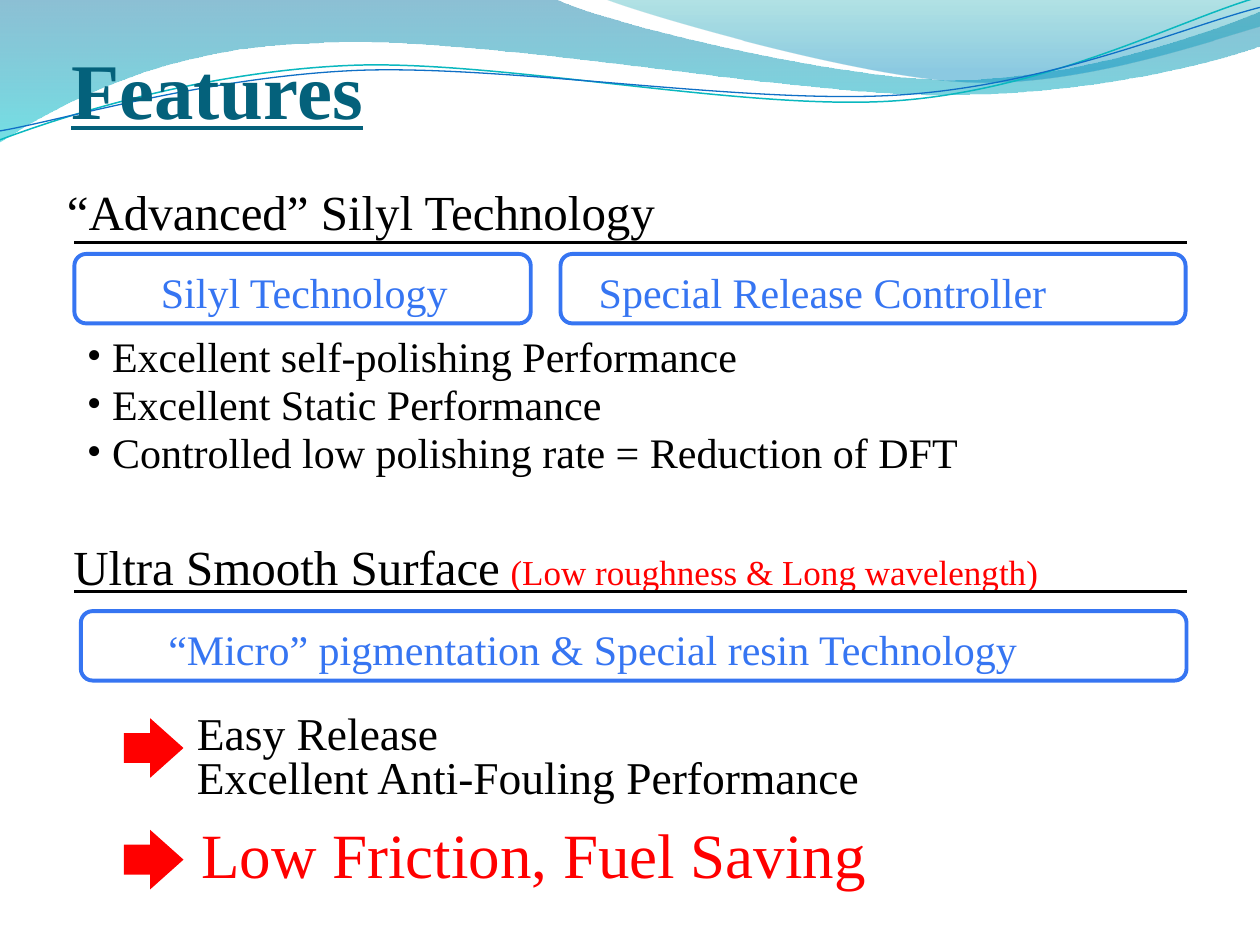
import itertools

import pptx
import pptx.util
import pptx.dml.color
import pptx.enum.shapes
import pptx.enum.text
import pptx.oxml.ns
import lxml.etree

Cm, Pt = pptx.util.Cm, pptx.util.Pt
SHAPES = pptx.enum.shapes.MSO_SHAPE
ALIGN = pptx.enum.text.PP_ALIGN
ANCHOR = pptx.enum.text.MSO_ANCHOR
qn = pptx.oxml.ns.qn

FONT = "Times New Roman"
COLORS = {
    "title": "04617B", "body": "000000", "frame": "3675F2", "accent": "FF0000",
    "deep": "0074A1", "aqua": "00C6CF", "teal": "00A1A9", "sky": "008BBF",
    "teal line": "0AB8BF", "blue line": "0F6FC6",
}

WAVE_BANDS = [
    {"start": (0, 0), "stops": [(0, "deep", 45), (1, "aqua", 55)], "segments": [
        [(11.18, -0.03)],
        [(12.09, 0.43), (16.87, 1.6), (19.25, 1.6)],
        [(21.67, 1.6), (24.33, 0.66), (25.4, 0.23)],
        [(25.43, 0.91)],
        [(24.97, 1.12), (22.1, 1.93), (18.95, 1.91)],
        [(15.8, 1.91), (9.7, 0.71), (6.53, 0.86)],
        [(3.28, 0.91), (1.17, 2.11), (-0.03, 2.87)],
        [(0, 0)]]},
    {"start": (12.17, -0.03), "stops": [(0, "teal", 30), (0.8, "sky", 45)], "segments": [
        [(12.93, 0.28), (17.32, 1.57), (19.53, 1.65)],
        [(21.74, 1.75), (24.41, 0.81), (25.4, 0.53)],
        [(25.4, 0)],
        [(12.17, -0.03)]]},
]
WAVE_LINES = [
    {"start": (0, 2.82), "color": "teal line", "width": 0.85, "segments": [
        [(1.22, 2.36), (4.01, 1.45), (7.04, 1.32)],
        [(10.03, 1.19), (15.06, 2.26), (18.11, 2.03)],
        [(21.16, 1.8), (23.83, 0.38), (25.35, -0.05)]]},
    {"start": (0, 2.64), "color": "blue line", "width": 0.75, "segments": [
        [(1.19, 2.44), (4.17, 1.55), (7.19, 1.42)],
        [(10.24, 1.3), (15.16, 2.13), (18.21, 1.91)],
        [(21.23, 1.7), (23.9, 0.53), (25.4, 0.15)]]},
]

RULE_LEFT, RULE_RIGHT = 1.5, 23.92
RULE_TOPS = [4.89, 11.93]
FEATURES = [
    ("Excellent self-polishing Performance", 19.4),
    ("Excellent Static Performance", 15.2),
    ("Controlled low polishing rate = Reduction of DFT", 23.9),
]
FEATURE_TOP, FEATURE_PITCH = 6.53, 0.97
TECHNOLOGIES = [
    ("Silyl Technology", (1.5, 5.12, 9.2), (1.83, 8.61), ALIGN.CENTER),
    ("Special Release Controller", (11.3, 5.12, 12.6), (11.82, 12.09), ALIGN.LEFT),
    ("“Micro” pigmentation & Special resin Technology", (1.63, 12.32, 22.29),
     (1.36, 21.18), ALIGN.CENTER),
]
ARROW_TOPS = [14.48, 16.73]
ARROW_LEFT, ARROW_SIZE = 2.5, 1.2

deck = pptx.Presentation()
deck.slide_width, deck.slide_height = Cm(25.4), Cm(19.05)
slide = deck.slides.add_slide(deck.slide_layouts[6])


def rgb(name):
    return pptx.dml.color.RGBColor.from_string(COLORS[name])


def add_run(paragraph, text, size, color, bold=None, underline=None):
    run = paragraph.add_run()
    run.text = text
    font = run.font
    font.name, font.size, font.bold, font.underline = FONT, Pt(size), bold, underline
    font.color.rgb = rgb(color)


def add_text(text, left, top, width, height, size, color="body", bold=None,
             underline=None, align=ALIGN.LEFT, spacing=None, bullet=False,
             insets=(0.25, 0.13, 0.25, 0.13), anchor=ANCHOR.TOP):
    frame = slide.shapes.add_textbox(Cm(left), Cm(top), Cm(width), Cm(height)).text_frame
    frame.word_wrap = True
    frame.vertical_anchor = anchor
    (frame.margin_left, frame.margin_top,
     frame.margin_right, frame.margin_bottom) = map(Cm, insets)
    for number, line in enumerate(text.split("\n")):
        paragraph = frame.add_paragraph() if number else frame.paragraphs[0]
        paragraph.alignment = align
        if spacing:
            paragraph.line_spacing = spacing
        if bullet:
            properties = paragraph._p.get_or_add_pPr()
            properties.set("marL", str(Cm(0.51)))
            properties.set("indent", str(-Cm(0.51)))
            lxml.etree.SubElement(properties, qn("a:buFont")).set("typeface", FONT)
            lxml.etree.SubElement(properties, qn("a:buChar")).set("char", "•")
        add_run(paragraph, line, size, color, bold, underline)
    return frame


def add_wave(start, segments, close):
    points = [(Cm(x), Cm(y)) for x, y in itertools.chain(*segments)]
    builder = slide.shapes.build_freeform(*map(Cm, start))
    builder.add_line_segments(points, close=close)
    wave = builder.convert_to_shape()
    wave.shadow.inherit = False
    corners = iter(list(wave.element.spPr.iter(qn("a:lnTo"))))
    for segment in segments:
        first, *others = itertools.islice(corners, len(segment))
        if others:
            first.tag = qn("a:cubicBezTo")
            for corner in others:
                first.append(corner[0])
                corner.getparent().remove(corner)
    return wave


def add_outline(shape, color, width):
    shape.fill.background()
    shape.line.color.rgb = rgb(color)
    shape.line.width = Pt(width)


def add_preset(kind, left, top, width, height, *adjustments):
    shape = slide.shapes.add_shape(kind, Cm(left), Cm(top), Cm(width), Cm(height))
    shape.shadow.inherit = False
    for number, value in enumerate(adjustments):
        shape.adjustments[number] = value
    return shape


for band in WAVE_BANDS:
    wave = add_wave(band["start"], band["segments"], True)
    wave.line.fill.background()
    wave.fill.gradient()
    wave.fill.gradient_angle = 270
    for stop, (position, color, opacity) in zip(wave.fill.gradient_stops, band["stops"]):
        stop.position = position
        stop.color.rgb = rgb(color)
    tints = wave.element.spPr.iter(qn("a:srgbClr"))
    for tint, (position, color, opacity) in zip(tints, band["stops"]):
        lxml.etree.SubElement(tint, qn("a:alpha")).set("val", str(opacity * 1000))

for line in WAVE_LINES:
    add_outline(add_wave(line["start"], line["segments"], False), line["color"], line["width"])

add_text("Features", 1.44, 0.67, 22.86, 2.06, 45, "title", bold=True, underline=True,
         insets=(0, 0.13, 0, 0), anchor=ANCHOR.BOTTOM)
add_text("“Advanced” Silyl Technology", 1.1, 3.52, 20.6, 1.45, 28)

for row, (feature, width) in enumerate(FEATURES):
    add_text(feature, 1.5, FEATURE_TOP + row * FEATURE_PITCH, width, 1.27, 24, bullet=True)

for technology, (left, top, width), (text_left, text_width), align in TECHNOLOGIES:
    add_outline(add_preset(SHAPES.ROUNDED_RECTANGLE, left, top, width, 1.4, 0.17), "frame", 2.25)
    add_text(technology, text_left, top + 0.12, text_width, 1.27, 24, "frame", align=align)

add_text("Low Friction, Fuel Saving", 3.81, 16.32, 18.5, 1.78, 36, "accent")
for top in ARROW_TOPS:
    arrow = add_preset(SHAPES.RIGHT_ARROW, ARROW_LEFT, top, ARROW_SIZE, ARROW_SIZE, 0.5, 0.56)
    arrow.fill.solid()
    arrow.fill.fore_color.rgb = rgb("accent")
    arrow.line.fill.background()
add_text("Easy Release\nExcellent Anti-Fouling Performance", 3.72, 14.3, 18, 2.03, 26,
         spacing=0.8)

surface = add_text("Ultra Smooth Surface", 1.23, 10.69, 24.1, 1.45, 28)
add_run(surface.paragraphs[0], " ", 24, "body")
add_run(surface.paragraphs[0], "(Low roughness & Long wavelength)", 20, "accent")

for top in RULE_TOPS:
    rule = slide.shapes.add_connector(pptx.enum.shapes.MSO_CONNECTOR.STRAIGHT,
                                      Cm(RULE_LEFT), Cm(top), Cm(RULE_RIGHT), Cm(top))
    rule.line.color.rgb = rgb("body")
    rule.line.width = Pt(1.5)
    lxml.etree.SubElement(rule.element.spPr, qn("a:effectLst"))

deck.save("out.pptx")
